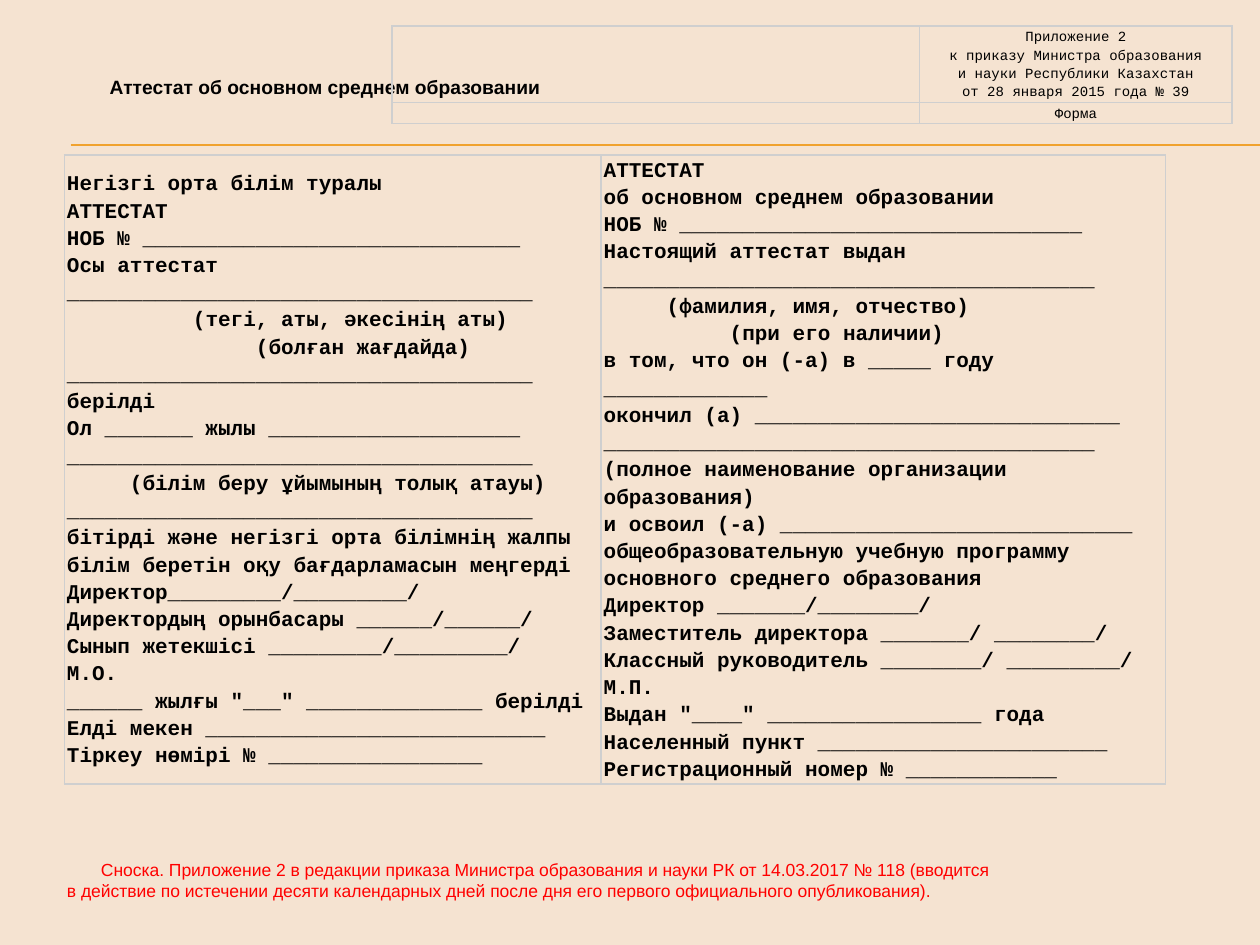
from lxml import etree
from pptx import Presentation
from pptx.dml.color import RGBColor
from pptx.enum.shapes import MSO_CONNECTOR
from pptx.enum.text import MSO_ANCHOR, MSO_AUTO_SIZE, PP_ALIGN
from pptx.oxml import parse_xml
from pptx.oxml.ns import nsdecls, qn
from pptx.util import Inches, Pt

LEFT, MID = PP_ALIGN.LEFT, PP_ALIGN.CENTER
CENTER = MSO_ANCHOR.MIDDLE
GROW, FIXED = MSO_AUTO_SIZE.SHAPE_TO_FIT_TEXT, MSO_AUTO_SIZE.NONE
LINE = MSO_CONNECTOR.STRAIGHT
HUES = {"back": "F5E3D1", "rule": "F0A22E", "edge": "CFCFCF",
        "ink": "000000", "note": "FF0000"}
MONO, SANS = "Courier New", "Arial"
COLS, ROWS = 100, 75  # square grid over the slide
CELL = Inches(10) // COLS

TITLE = "Аттестат об основном среднем образовании"
ORDER = ["Приложение 2", "к приказу Министра образования",
         "и науки Республики Казахстан", "от 28 января 2015 года № 39"]
NOTE = ["Сноска. Приложение 2 в редакции приказа Министра образования и науки "
        "РК от 14.03.2017 № 118 (вводится",
        "в действие по истечении десяти календарных дней после дня его "
        "первого официального опубликования)."]


def blank(count):
    return "_" * count


# A pair is a tab stop in grid columns and the line's text
KAZAKH = [
    "Негізгі орта білім туралы",
    "АТТЕСТАТ",
    "НОБ № " + blank(30),
    "Осы аттестат",
    blank(37),
    (16, "(тегі, аты, әкесінің аты)"),
    (20, "(болған жағдайда)"),
    blank(37),
    "берілді",
    f"Ол {blank(7)} жылы {blank(20)}",
    blank(37),
    (4, "(білім беру ұйымының толық атауы)"),
    blank(37),
    "бітірді және негізгі орта білімнің жалпы",
    "білім беретін оқу бағдарламасын меңгерді",
    f"Директор{blank(9)}/{blank(9)}/",
    f"Директордың орынбасары {blank(6)}/{blank(6)}/",
    f"Сынып жетекшісі {blank(9)}/{blank(9)}/",
    "М.О.",
    f'{blank(6)} жылғы "{blank(3)}" {blank(14)} берілді',
    "Елді мекен " + blank(27),
    "Тіркеу нөмірі № " + blank(17),
]
RUSSIAN = [
    "АТТЕСТАТ",
    "об основном среднем образовании",
    "НОБ № " + blank(32),
    "Настоящий аттестат выдан",
    blank(39),
    (16, "(фамилия, имя, отчество)"),
    (22, "(при его наличии)"),
    f"в том, что он (-а) в {blank(5)} году {blank(13)}",
    "окончил (а) " + blank(29),
    blank(39),
    "(полное наименование организации образования)",
    "и освоил (-а) " + blank(28),
    "общеобразовательную учебную программу",
    "основного среднего образования",
    f"Директор {blank(7)}/{blank(8)}/",
    f"Заместитель директора {blank(7)}/ {blank(8)}/",
    f"Классный руководитель {blank(8)}/ {blank(9)}/",
    "М.П.",
    f'Выдан "{blank(4)}" {blank(17)} года',
    "Населенный пункт " + blank(23),
    "Регистрационный номер № " + blank(12),
]


def span(count):
    return round(count * CELL)


def hue(name):
    return RGBColor.from_string(HUES[name])


def tab(para, stops):
    """Set left tab stops, given in grid columns."""
    tabs = etree.SubElement(para._p.get_or_add_pPr(), qn("a:tabLst"))
    for stop in stops:
        etree.SubElement(tabs, qn("a:tab"), pos=str(span(stop)), algn="l")


def write(frame, paras, size, font=SANS, color="ink", bold=False,
          align=LEFT, space=None, after=None, inset=0, first=0):
    """Each item of paras is a list of lines that share one paragraph."""
    for i, lines in enumerate(paras):
        para = frame.paragraphs[0] if i == 0 else frame.add_paragraph()
        para.alignment = align
        if space:
            para.line_spacing = space
        if after:
            para.space_after = Pt(after)
        props = para._p.get_or_add_pPr()
        props.set("marL", str(span(inset)))
        props.set("indent", str(span(first if i == 0 else 0)))
        stops = sorted({line[0] for line in lines if isinstance(line, tuple)})
        if stops:
            tab(para, stops)
        if not lines:
            para._p.get_or_add_endParaRPr().set("sz", str(size * 100))
        for j, line in enumerate(lines):
            if j:
                para.add_line_break()
            if isinstance(line, tuple):
                line = "\t" * (stops.index(line[0]) + 1) + line[1]
            run = para.add_run()
            run.text = line
            run.font.size, run.font.name, run.font.bold = Pt(size), font, bold
            run.font.color.rgb = hue(color)


def edge(cell):
    """Draw the four borders, which come before the fill in the XML."""
    props = cell._tc.get_or_add_tcPr()
    for i, side in enumerate("LRTB"):
        props.insert(i, parse_xml(
            f'<a:ln{side} {nsdecls("a")} w="{Pt(1)}"><a:solidFill>'
            f'<a:srgbClr val="{HUES["edge"]}"/></a:solidFill></a:ln{side}>'))


def grid(slide, left, top, wides, highs, cells, **style):
    frame = slide.shapes.add_table(
        len(highs), len(wides), span(left), span(top),
        span(sum(wides)), span(sum(highs)))
    table = frame.table
    table.first_row = table.horz_banding = False
    for col, wide in zip(table.columns, wides):
        col.width = span(wide)
    for row, high, texts in zip(table.rows, highs, cells):
        row.height = span(high)
        for cell, lines in zip(row.cells, texts):
            cell.margin_left = cell.margin_right = span(0.1)
            cell.margin_top = cell.margin_bottom = span(0.1)
            cell.vertical_anchor = CENTER
            cell.fill.background()
            edge(cell)
            write(cell.text_frame, [lines], font=MONO, space=1.15, **style)


def rule(slide, left, top):
    line = slide.shapes.add_connector(
        LINE, span(left), span(top), span(COLS), span(top))
    line.line.color.rgb, line.line.width = hue("rule"), Pt(0.75)
    etree.SubElement(line._element.spPr, qn("a:effectLst"))


def place(shape, left, top, wide, high):
    shape.left, shape.top = span(left), span(top)
    shape.width, shape.height = span(wide), span(high)


def main():
    deck = Presentation()
    deck.slide_width, deck.slide_height = span(COLS), span(ROWS)
    slide = deck.slides.add_slide(deck.slide_layouts[5])
    slide.background.fill.solid()
    slide.background.fill.fore_color.rgb = hue("back")

    # Title
    title = slide.shapes.title
    place(title, 7.7, 5.45, 50.1, 2.9)
    title.text_frame.vertical_anchor = CENTER
    title.text_frame.auto_size = FIXED
    write(title.text_frame, [[TITLE]], 11, bold=True)

    # Double rule under the heading
    for top in (11.5, 11.55):
        rule(slide, 5.6, top)

    # Order reference and certificate form
    grid(slide, 31.1, 2.05, [41.9, 24.8], [6.1, 1.6],
         [[[], ORDER], [[], ["Форма"]]], size=8, align=MID)
    grid(slide, 5.12, 12.3, [42.6, 44.8], [49.9],
         [[KAZAKH, RUSSIAN]], size=12, bold=True, after=1, inset=0.1)

    # Footnote
    note = slide.shapes.add_textbox(0, 0, 0, 0)
    place(note, 4.33, 67.65, 92.9, 4.4)
    frame = note.text_frame
    frame.word_wrap, frame.auto_size = True, GROW
    frame.vertical_anchor = CENTER
    write(frame, [[line] for line in NOTE], 10, color="note", first=2.7)

    deck.save("out.pptx")


if __name__ == "__main__":
    main()
